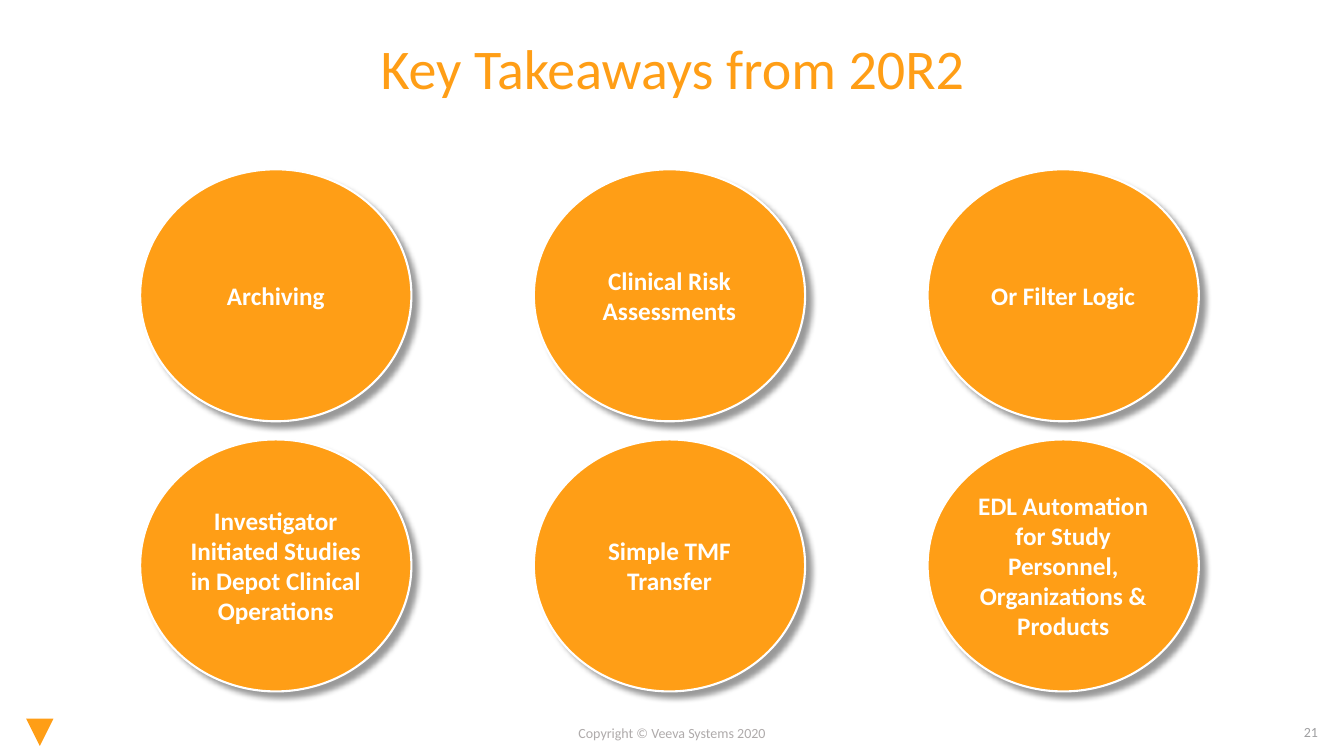
from lxml.etree import SubElement as Sub
from pptx import Presentation
from pptx.dml.color import RGBColor
from pptx.enum.shapes import MSO_SHAPE as Kind
from pptx.enum.text import MSO_ANCHOR as Anchor, PP_ALIGN as Align
from pptx.oxml.ns import qn
from pptx.util import Inches, Pt

ORANGE = RGBColor(0xFF, 0x9E, 0x16)
WHITE = RGBColor(0xFF, 0xFF, 0xFF)
GRAY = RGBColor(0x9F, 0x9F, 0xA1)
PALE = RGBColor(0xAF, 0xAB, 0xAB)

TOPICS = [
    ["Archiving", "Clinical Risk Assessments", "Or Filter Logic"],
    ["Investigator Initiated Studies in Depot Clinical Operations",
     "Simple TMF Transfer",
     "EDL Automation for Study Personnel, Organizations & Products"],
]
LEFT, TOP = 1.39, 1.68
STEP_X, STEP_Y = 3.905, 2.68
WIDTH, HEIGHT = 2.69, 2.5


def write(shape, text, size, color, align=Align.CENTER, bold=False):
    frame = shape.text_frame
    frame.word_wrap = True
    para = frame.paragraphs[0]
    para.alignment = align
    run = para.add_run()
    run.text = text
    font = run.font
    font.name, font.size, font.bold = "Calibri", Pt(size), bold
    font.color.rgb = color
    return para


def add_label(slide, box, *style):
    label = slide.shapes.add_textbox(*map(Inches, box))
    label.text_frame.vertical_anchor = Anchor.MIDDLE
    return write(label, *style)


def add_solid(slide, kind, *box):
    shape = slide.shapes.add_shape(kind, *map(Inches, box))
    shape.shadow.inherit = False
    shape.fill.solid()
    shape.fill.fore_color.rgb = ORANGE
    shape.line.fill.background()
    return shape


def add_shadow(shape):
    effects = shape._element.spPr.find(qn("a:effectLst"))
    outer = Sub(effects, qn("a:outerShdw"), blurRad=str(Pt(4)),
                dist=str(Pt(6)), dir=str(45 * 60000), algn="tl",
                rotWithShape="0")
    color = Sub(outer, qn("a:srgbClr"), val="000000")
    Sub(color, qn("a:alpha"), val="40000")


def add_topic(slide, left, top, text):
    disc = add_solid(slide, Kind.OVAL, left, top, WIDTH, HEIGHT)
    disc.line.color.rgb = WHITE
    disc.line.width = Pt(1.5)
    add_shadow(disc)
    disc.text_frame.vertical_anchor = Anchor.MIDDLE
    write(disc, text, 18, WHITE, bold=True)


def main():
    deck = Presentation()
    deck.slide_width, deck.slide_height = Inches(13.33), Inches(7.5)
    slide = deck.slides.add_slide(deck.slide_layouts[6])

    # Footer: mark, page number and copyright
    mark = add_solid(slide, Kind.ISOSCELES_TRIANGLE, 0.26, 7.13, 0.27, 0.27)
    mark.rotation = 180
    add_label(slide, (12.05, 7.13, 1.12, 0.27), "21", 10, GRAY, Align.RIGHT)
    add_label(slide, (4.8, 7.14, 3.73, 0.27),
              "Copyright © Veeva Systems 2020", 10, PALE)

    # Title
    title = add_label(slide, (0.67, 0.25, 12, 1),
                      "Key Takeaways from 20R2", 40, ORANGE)
    title.line_spacing = 0.7

    # Grid of topics
    for row, topics in enumerate(TOPICS):
        for col, text in enumerate(topics):
            add_topic(slide, LEFT + col * STEP_X, TOP + row * STEP_Y, text)

    deck.save("out.pptx")


if __name__ == "__main__":
    main()
